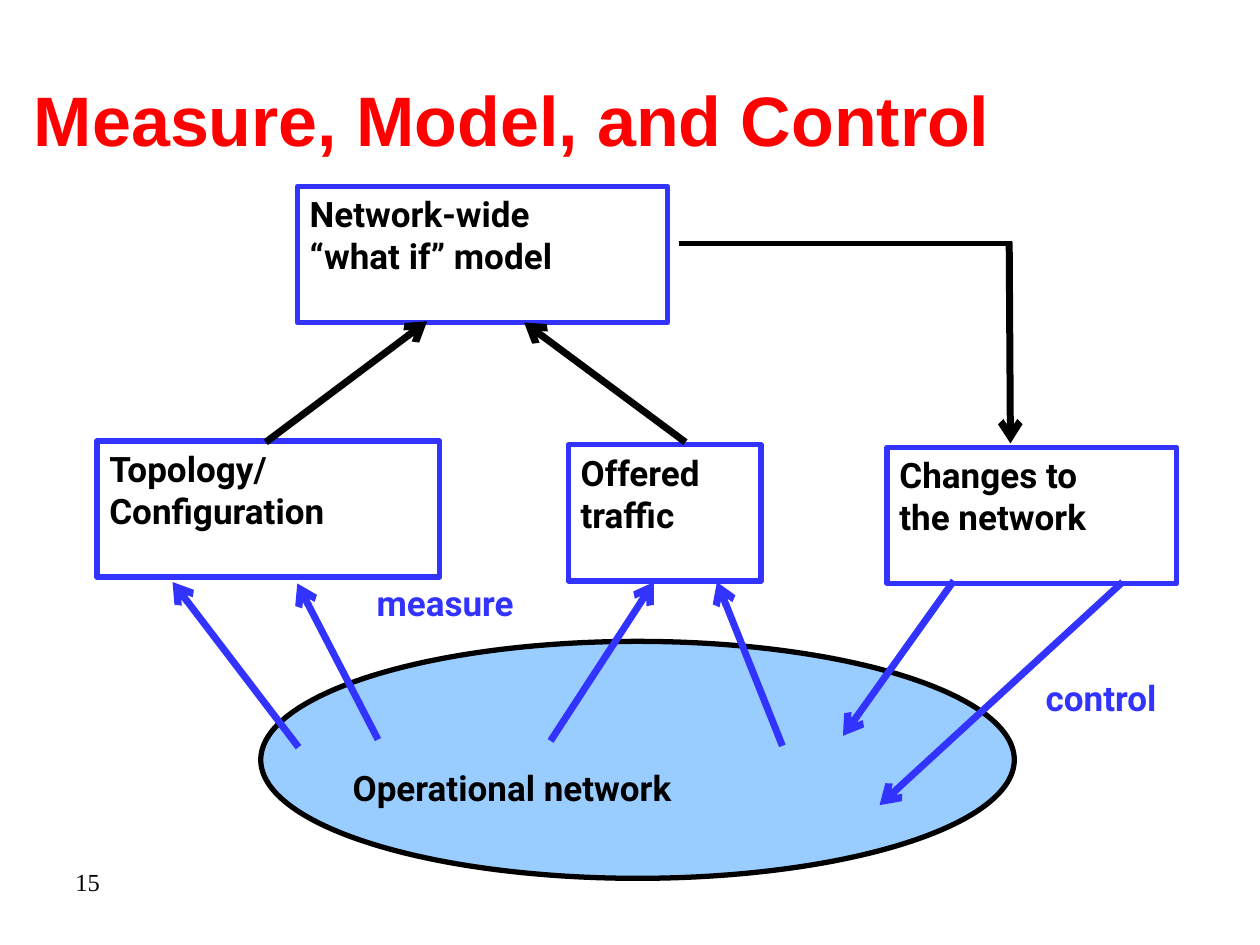
from lxml import etree
from pptx import Presentation
from pptx.dml.color import RGBColor
from pptx.enum.shapes import MSO_CONNECTOR, MSO_SHAPE
from pptx.enum.text import MSO_ANCHOR, PP_ALIGN
from pptx.oxml.ns import qn
from pptx.util import Pt

RECT, OVAL = MSO_SHAPE.RECTANGLE, MSO_SHAPE.OVAL
STRAIGHT = MSO_CONNECTOR.STRAIGHT
TOP, MIDDLE = MSO_ANCHOR.TOP, MSO_ANCHOR.MIDDLE
LEFT = PP_ALIGN.LEFT
BLACK, BLUE, RED, SKY = "000000", "3333FF", "FF0000", "99CCFF"
BOX_H = 77.8

# left, top, width, lines of text
BOXES = [
    (55.4, 252, 195.8, "Topology/\nConfiguration"),
    (324.7, 254.2, 110.2, "Offered\ntraffic"),
    (506.9, 255.6, 165.6, "Changes to\nthe network"),
    (169.9, 106.6, 211.7, "Network-wide\n“what if” model"),
]
# start x, start y, end x, end y
MEASURE_ARROWS = [
    (170.6, 427, 98.6, 332.6),
    (216, 422.6, 169.9, 333.4),
    (314.6, 423.4, 373.7, 332.6),
    (447.1, 426.2, 409.7, 332.6),
]
CONTROL_ARROWS = [
    (545, 331.9, 481.7, 420.5),
    (641.5, 332.6, 502.6, 460.1),
]
MODEL_ARROWS = [
    (151.9, 252.7, 244.1, 183.6),
    (391.7, 252.7, 299.5, 184.3),
]


def rgb(color):
    return RGBColor.from_string(color)


def write(tf, text, size=20, font="Roboto", color=BLACK, bold=True,
          anchor=TOP, wrap=True):
    tf.word_wrap = wrap
    tf.vertical_anchor = anchor
    for i, line in enumerate(text.split("\n")):
        p = tf.add_paragraph() if i else tf.paragraphs[0]
        p.alignment = LEFT
        r = p.add_run()
        r.text = line
        r.font.size, r.font.name, r.font.bold = Pt(size), font, bold
        r.font.color.rgb = rgb(color)


def add_title(s, text):
    sp = s.shapes.title
    sp.left, sp.top, sp.width, sp.height = Pt(12.2), Pt(23), Pt(690), Pt(90)
    write(sp.text_frame, text, size=40, font="Arial", color=RED, anchor=MIDDLE)


def add_label(s, x, y, w, h, text, **fmt):
    sp = s.shapes.add_textbox(Pt(x), Pt(y), Pt(w), Pt(h))
    write(sp.text_frame, text, **fmt)


def add_outlined(s, kind, x, y, w, h, line, fill=None):
    sp = s.shapes.add_shape(kind, Pt(x), Pt(y), Pt(w), Pt(h))
    sp.shadow.inherit = False
    if fill:
        sp.fill.solid()
        sp.fill.fore_color.rgb = rgb(fill)
    else:
        sp.fill.background()
    sp.line.color.rgb = rgb(line)
    sp.line.width = Pt(3)
    return sp


def add_line(s, x1, y1, x2, y2, color, width=4, arrow=True):
    c = s.shapes.add_connector(STRAIGHT, Pt(x1), Pt(y1), Pt(x2), Pt(y2))
    c.line.color.rgb = rgb(color)
    c.line.width = Pt(width)
    if arrow:
        etree.SubElement(c.line._get_or_add_ln(), qn("a:tailEnd"), type="arrow")
    etree.SubElement(c._element.spPr, qn("a:effectLst"))


def main():
    prs = Presentation()
    prs.slide_width, prs.slide_height = Pt(720), Pt(540)
    s = prs.slides.add_slide(prs.slide_layouts[5])

    # Title and page number
    add_title(s, "Measure, Model, and Control")
    add_label(s, 36, 491.8, 167.8, 37.4, "15",
              size=14, font="Times New Roman", bold=False)

    # Network and the boxes above it
    add_outlined(s, OVAL, 149, 366.5, 430.6, 135.4, BLACK, SKY)
    for x, y, w, text in BOXES:
        sp = add_outlined(s, RECT, x, y, w, BOX_H, BLUE)
        write(sp.text_frame, text)

    # Arrows between network, boxes and model
    for ends in MEASURE_ARROWS + CONTROL_ARROWS:
        add_line(s, *ends, BLUE)
    for ends in MODEL_ARROWS:
        add_line(s, *ends, BLACK)

    # Elbow from model to changes
    add_line(s, 388.1, 139, 578.2, 139, BLACK, width=3, arrow=False)
    add_line(s, 576.7, 138.2, 577.4, 253.4, BLACK)

    # Labels
    add_label(s, 194.4, 434.2, 305.3, 41, "Operational network", wrap=False)
    add_label(s, 208.1, 329, 120.2, 41, "measure", color=BLUE, wrap=False)
    add_label(s, 590.4, 383, 99.4, 41, "control", color=BLUE, wrap=False)

    prs.save("out.pptx")


if __name__ == "__main__":
    main()
